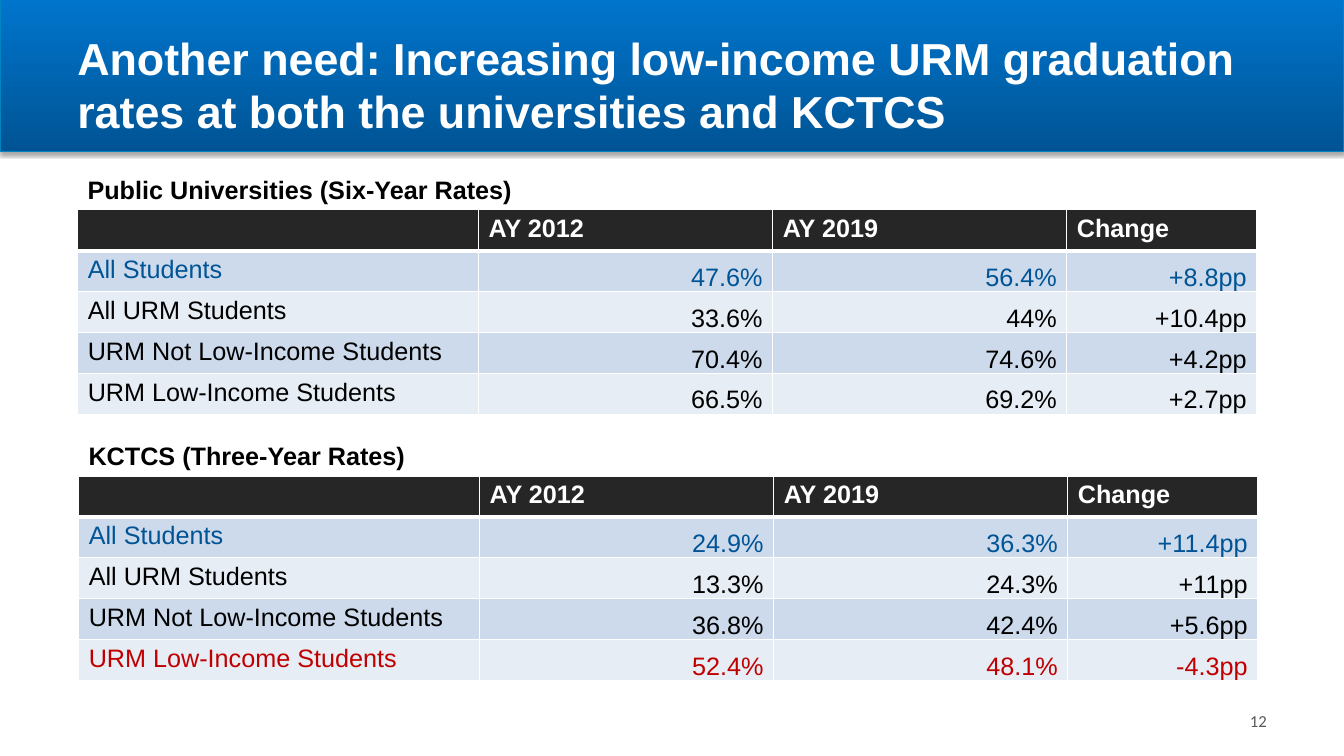
from dataclasses import dataclass

import pptx
import pptx.dml.color
import pptx.enum.shapes
import pptx.enum.text
import pptx.oxml
import pptx.oxml.ns
import pptx.util
from pptx.util import Pt

RGB = pptx.dml.color.RGBColor.from_string
Anchor = pptx.enum.text.MSO_ANCHOR
Align = pptx.enum.text.PP_ALIGN
NAMESPACE = pptx.oxml.ns.nsdecls("a")


@dataclass(frozen=True)
class Theme:
    font: str = "Arial"
    number_font: str = "Calibri"
    title_size: float = 32
    body_size: float = 18
    number_size: float = 12
    white: str = "FFFFFF"
    black: str = "000000"
    blue: str = "005495"
    bright_blue: str = "0075CC"
    banner_line: str = "0085C3"
    red: str = "C00000"
    grey: str = "595959"
    header: str = "262626"
    bands: tuple[str, str] = ("CCDAEB", "E7EDF5")


THEME = Theme()


@dataclass(frozen=True)
class RateRow:
    group: str
    rates: tuple[str, str, str]
    color: str = THEME.black


@dataclass(frozen=True)
class RateTable:
    caption: str
    left: float
    top: float
    rows: tuple[RateRow, ...]


HEADINGS = ("", "AY 2012", "AY 2019", "Change")
COLUMN_WIDTHS = (286.4, 210.1, 210.1, 135.6)
ROW_HEIGHT = 29.25
CAPTION_HEIGHT = 29

TABLES = (
    RateTable("Public Universities (Six-Year Rates)", 55.5, 149.8, (
        RateRow("All Students", ("47.6%", "56.4%", "+8.8pp"), THEME.blue),
        RateRow("All URM Students", ("33.6%", "44%", "+10.4pp")),
        RateRow("URM Not Low-Income Students", ("70.4%", "74.6%", "+4.2pp")),
        RateRow("URM Low-Income Students", ("66.5%", "69.2%", "+2.7pp")),
    )),
    RateTable("KCTCS (Three-Year Rates)", 56.2, 340, (
        RateRow("All Students", ("24.9%", "36.3%", "+11.4pp"), THEME.blue),
        RateRow("All URM Students", ("13.3%", "24.3%", "+11pp")),
        RateRow("URM Not Low-Income Students", ("36.8%", "42.4%", "+5.6pp")),
        RateRow("URM Low-Income Students", ("52.4%", "48.1%", "-4.3pp"), THEME.red),
    )),
)


def write(frame, text: str, color: str, size: float = THEME.body_size,
          bold: bool = False, align=Align.LEFT, font: str = THEME.font) -> None:
    para = frame.paragraphs[0]
    para.alignment = align
    span = para.add_run()
    span.text = text
    span.font.name = font
    span.font.size = Pt(size)
    span.font.bold = bold
    span.font.color.rgb = RGB(color)


def add_text_box(page, left: float, top: float, width: float, height: float):
    box = page.shapes.add_textbox(Pt(left), Pt(top), Pt(width), Pt(height))
    box.text_frame.word_wrap = True
    return box.text_frame


def add_banner(page) -> None:
    banner = page.shapes.add_shape(
        pptx.enum.shapes.MSO_SHAPE.RECTANGLE, 0, 0, Pt(960), Pt(108))
    banner.fill.gradient()
    banner.fill.gradient_angle = 90
    for stop, color in zip(banner.fill.gradient_stops, (THEME.blue, THEME.bright_blue)):
        stop.color.rgb = RGB(color)
    banner.line.color.rgb = RGB(THEME.banner_line)
    banner.line.width = Pt(0.75)
    # Soft shadow below the banner
    banner.element.spPr.append(pptx.oxml.parse_xml(
        f'<a:effectLst {NAMESPACE}><a:outerShdw blurRad="{Pt(3.1)}" dist="{Pt(1.8)}" '
        f'dir="5400000" rotWithShape="0"><a:srgbClr val="{THEME.black}">'
        '<a:alpha val="35000"/></a:srgbClr></a:outerShdw></a:effectLst>'))
    page.shapes.title.element.addprevious(banner.element)


def add_title(page, text: str) -> None:
    title = page.shapes.title
    title.left, title.top, title.width, title.height = Pt(48), Pt(12), Pt(864), Pt(96)
    frame = title.text_frame
    frame.word_wrap = True
    frame.auto_size = pptx.enum.text.MSO_AUTO_SIZE.NONE
    frame.vertical_anchor = Anchor.MIDDLE
    write(frame, text, THEME.white, THEME.title_size, bold=True)


def set_borders(cell, top: float = 1, bottom: float = 1) -> None:
    properties = cell._tc.get_or_add_tcPr()
    sides = (("L", 1), ("R", 1), ("T", top), ("B", bottom))
    for position, (side, width) in enumerate(sides):
        properties.insert(position, pptx.oxml.parse_xml(
            f'<a:ln{side} {NAMESPACE} w="{Pt(width)}"><a:solidFill>'
            f'<a:srgbClr val="{THEME.white}"/></a:solidFill></a:ln{side}>'))


def fill_cell(cell, color: str) -> None:
    cell.fill.solid()
    cell.fill.fore_color.rgb = RGB(color)


def add_rate_table(page, data: RateTable) -> None:
    row_count = len(data.rows) + 1
    grid = page.shapes.add_table(
        row_count, len(HEADINGS), Pt(data.left), Pt(data.top),
        Pt(sum(COLUMN_WIDTHS)), Pt(ROW_HEIGHT * row_count)).table
    for column, width in zip(grid.columns, COLUMN_WIDTHS):
        column.width = Pt(width)
    for row in grid.rows:
        row.height = Pt(ROW_HEIGHT)

    # Header row
    for column, heading in enumerate(HEADINGS):
        cell = grid.cell(0, column)
        fill_cell(cell, THEME.header)
        set_borders(cell, bottom=3)
        if heading:
            write(cell.text_frame, heading, THEME.white, bold=True)

    # Rate rows
    for index, row in enumerate(data.rows, start=1):
        for column, text in enumerate((row.group, *row.rates)):
            cell = grid.cell(index, column)
            fill_cell(cell, THEME.bands[(index - 1) % 2])
            set_borders(cell, top=3 if index == 1 else 1)
            if column:
                cell.vertical_anchor = Anchor.BOTTOM
                cell.margin_left = cell.margin_top = Pt(0.75)
                cell.margin_right, cell.margin_bottom = Pt(7.2), 0
            write(cell.text_frame, text, row.color,
                  align=Align.RIGHT if column else Align.LEFT)

    # Caption above the table
    caption = add_text_box(page, data.left, data.top - CAPTION_HEIGHT, 856, CAPTION_HEIGHT)
    write(caption, data.caption, THEME.black, bold=True)


def main() -> None:
    deck = pptx.Presentation()
    deck.slide_width, deck.slide_height = Pt(960), Pt(540)
    page = deck.slides.add_slide(deck.slide_layouts[5])

    add_banner(page)
    add_title(page, "Another need: Increasing low-income URM graduation rates "
                    "at both the universities and KCTCS")
    for data in TABLES:
        add_rate_table(page, data)

    # Slide number
    number = add_text_box(page, 872, 500.5, 40, 28.8)
    number.vertical_anchor = Anchor.MIDDLE
    write(number, "12", THEME.grey, THEME.number_size,
          align=Align.RIGHT, font=THEME.number_font)

    deck.save("out.pptx")


if __name__ == "__main__":
    main()
